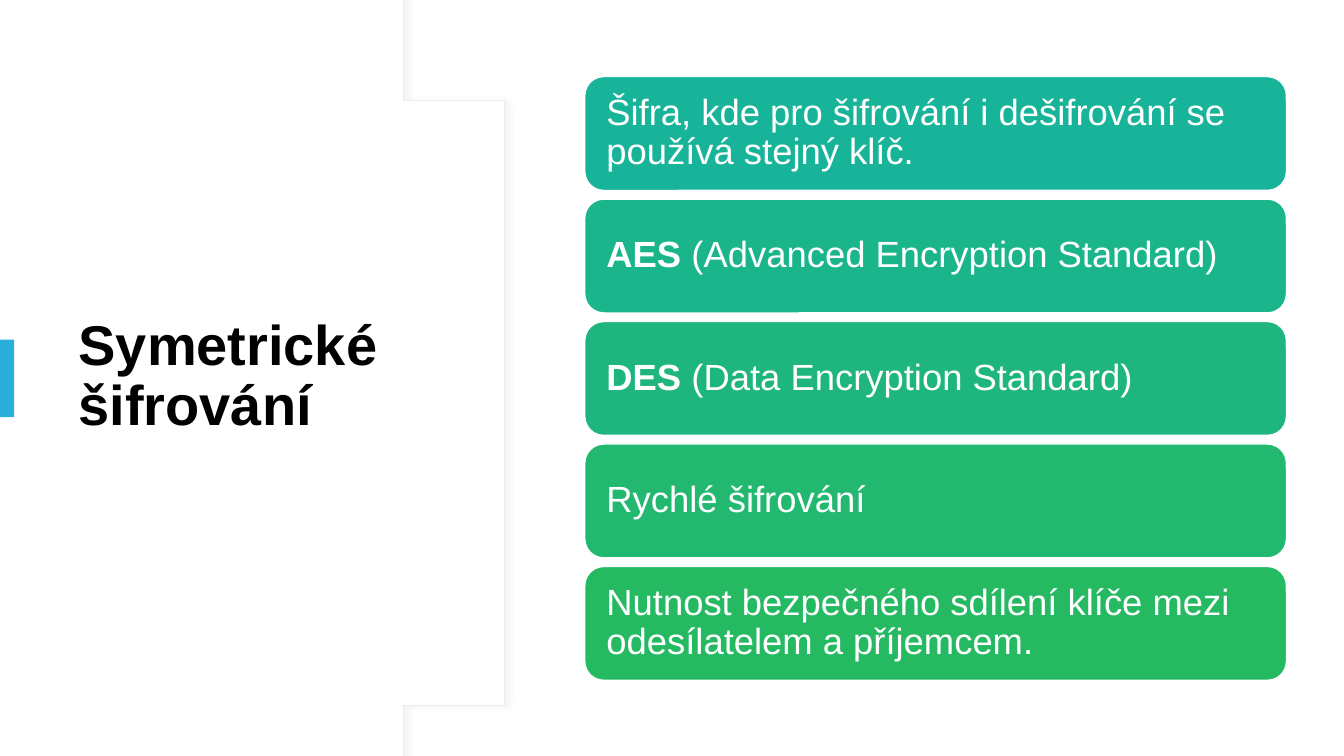
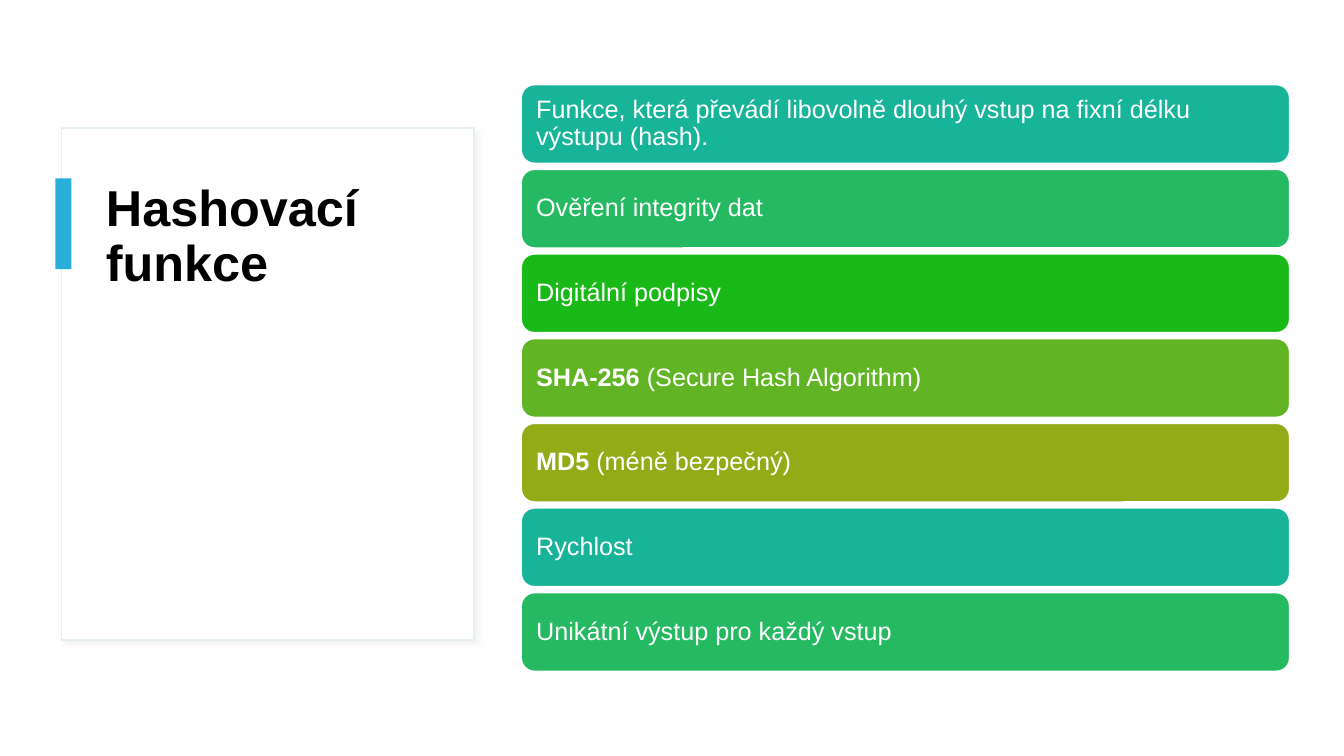
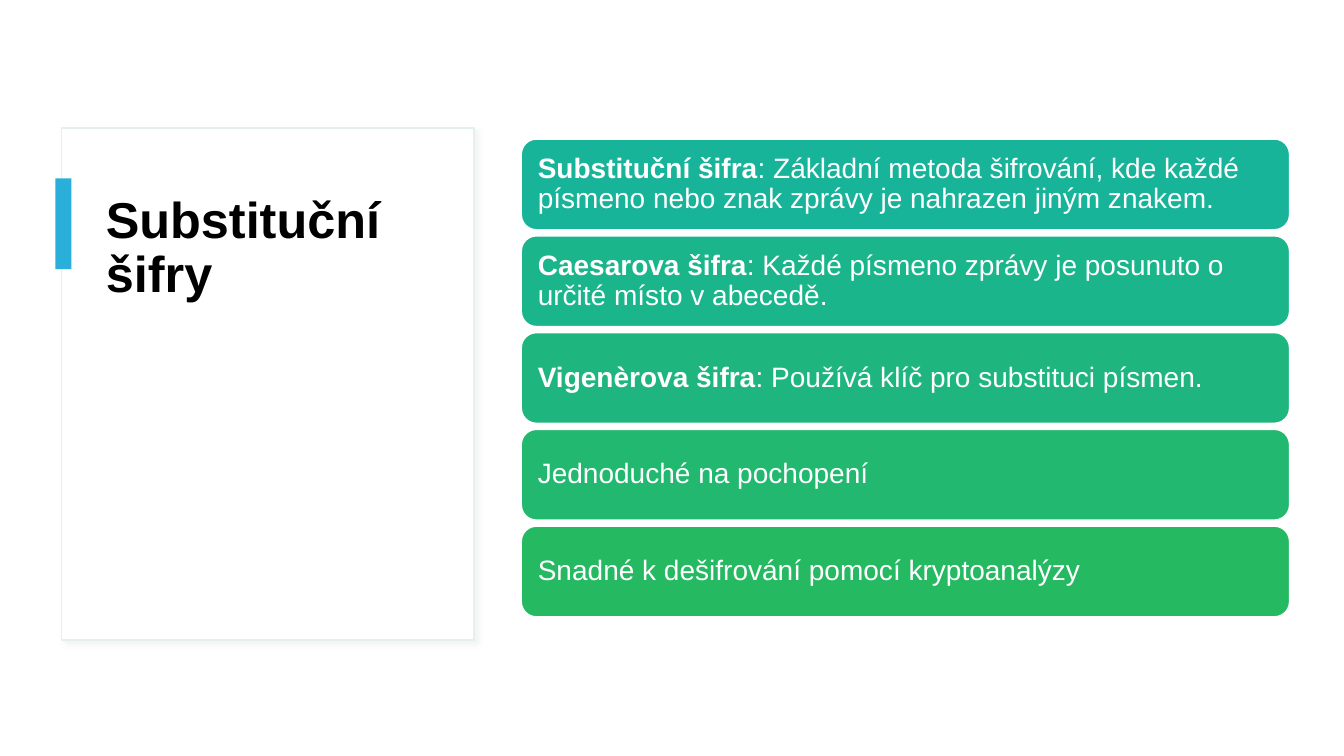
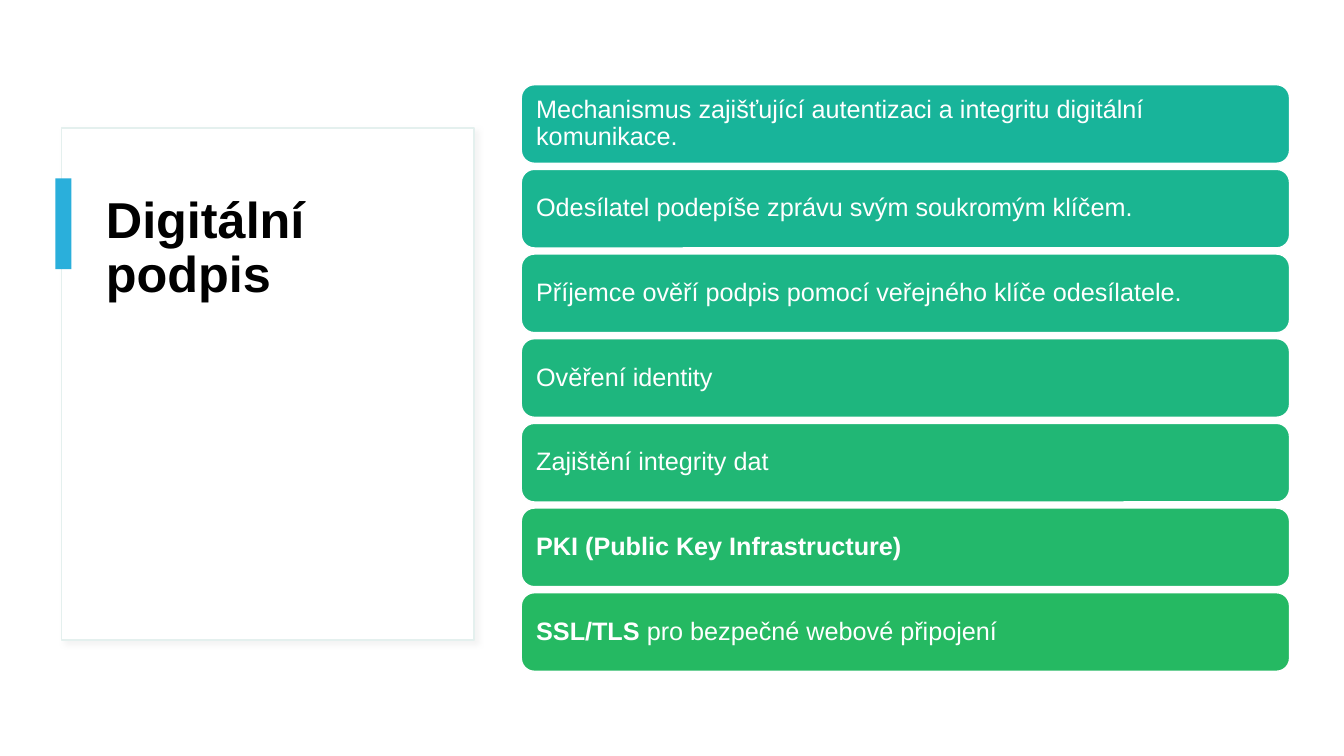
import pptx
import pptx.util
import pptx.dml.color
import pptx.enum.shapes
import pptx.enum.text
import pptx.oxml
import pptx.oxml.ns

Inches = pptx.util.Inches
Pt = pptx.util.Pt
RGBColor = pptx.dml.color.RGBColor
SHAPE = pptx.enum.shapes.MSO_SHAPE
ANCHOR = pptx.enum.text.MSO_ANCHOR

WHITE = RGBColor(0xFF, 0xFF, 0xFF)
BLACK = RGBColor(0x00, 0x00, 0x00)
BLUE = RGBColor(0x2A, 0xAF, 0xDB)
PALE = RGBColor(0xE4, 0xF0, 0xEE)
SHADOW = RGBColor(0xD9, 0xD9, 0xD9)
TEAL = RGBColor(0x18, 0xB4, 0x9A)
GREEN = RGBColor(0x25, 0xB9, 0x62)
ACCENTS = [TEAL, GREEN, RGBColor(0x19, 0xBA, 0x18),
           RGBColor(0x61, 0xB5, 0x24), RGBColor(0x93, 0xAB, 0x16)]
FONT = "Arial"

# Content: each card is (bold text, regular text)
SLIDES = [
    {"title": "Symetrické šifrování", "panel": "curve", "stack": "large", "colours": "blend",
     "cards": [
         ("", "Šifra, kde pro šifrování i dešifrování se používá stejný klíč."),
         ("AES", " (Advanced Encryption Standard)"),
         ("DES", " (Data Encryption Standard)"),
         ("", "Rychlé šifrování"),
         ("", "Nutnost bezpečného sdílení klíče mezi odesílatelem a příjemcem."),
     ]},
    {"title": "Hashovací funkce", "panel": "frame", "stack": "small", "colours": "accents",
     "title_top": 1.77,
     "cards": [
         ("", "Funkce, která převádí libovolně dlouhý vstup na fixní délku výstupu (hash)."),
         ("", "Ověření integrity dat"),
         ("", "Digitální podpisy"),
         ("SHA-256", " (Secure Hash Algorithm)"),
         ("MD5", " (méně bezpečný)"),
         ("", "Rychlost"),
         ("", "Unikátní výstup pro každý vstup"),
     ]},
    {"title": "Substituční šifry", "panel": "frame", "stack": "medium", "colours": "blend",
     "cards": [
         ("Substituční šifra", ": Základní metoda šifrování, kde každé písmeno nebo znak "
                               "zprávy je nahrazen jiným znakem."),
         ("Caesarova šifra", ": Každé písmeno zprávy je posunuto o určité místo v abecedě."),
         ("Vigenèrova šifra", ": Používá klíč pro substituci písmen."),
         ("", "Jednoduché na pochopení"),
         ("", "Snadné k dešifrování pomocí kryptoanalýzy"),
     ]},
    {"title": "Digitální podpis", "panel": "frame", "stack": "small", "colours": "blend",
     "cards": [
         ("", "Mechanismus zajišťující autentizaci a integritu digitální komunikace."),
         ("", "Odesílatel podepíše zprávu svým soukromým klíčem."),
         ("", "Příjemce ověří podpis pomocí veřejného klíče odesílatele."),
         ("", "Ověření identity"),
         ("", "Zajištění integrity dat"),
         ("PKI (Public Key Infrastructure)", ""),
         ("SSL/TLS", " pro bezpečné webové připojení"),
     ]},
]

# Layout in inches
STACKS = {
    "large": {"left": 5.8, "width": 6.96, "top": 0.76, "bottom": 6.75,
              "height": 1.13, "size": 26, "inset": 0.16},
    "medium": {"left": 5.17, "width": 7.62, "top": 1.38, "bottom": 6.12,
               "height": 0.9, "size": 20, "inset": 0.12},
    "small": {"left": 5.17, "width": 7.62, "top": 0.84, "bottom": 6.66,
              "height": 0.78, "size": 18, "inset": 0.11},
}
PANELS = {
    "curve": {"title": (0.68, 1.27, 3.94, 4.95), "size": 40, "anchor": ANCHOR.MIDDLE,
              "marker": (0, 3.37, 0.14, 0.77), "line": 0.75, "shadow_angle": 0},
    "frame": {"title": (0.95, 1.88, 3.39, 3.85), "size": 36, "anchor": ANCHOR.TOP,
              "marker": (0.55, 1.77, 0.16, 0.9), "line": 1, "shadow_angle": 45},
}
FRAME_BOX = (0.61, 1.27, 4.09, 5.08)
CURVE = [(4.01, 0.08), (4.79, 1.02), (5.27, 2.32), (5.27, 3.75)]
CURVE_STEPS = 30
SLIDE_WIDTH, SLIDE_HEIGHT = 13.33, 7.5


def set_all(target, values):
    for name, value in values.items():
        setattr(target, name, value)


def add_box(slide, kind, box, fill):
    shape = slide.shapes.add_shape(kind, *map(Inches, box))
    shape.shadow.inherit = False
    shape.fill.solid()
    shape.fill.fore_color.rgb = fill
    shape.line.fill.background()
    return shape


def set_line(shape, colour, width):
    shape.line.color.rgb = colour
    shape.line.width = Pt(width)


def add_soft_shadow(shape, angle):
    effects = shape._element.spPr.find(pptx.oxml.ns.qn("a:effectLst"))
    effects.append(pptx.oxml.parse_xml(
        f'<a:outerShdw {pptx.oxml.ns.nsdecls("a")} blurRad="{Pt(4)}" dist="{Pt(3)}" '
        f'dir="{angle * 60000}" algn="tl" rotWithShape="0"><a:srgbClr val="{SHADOW}">'
        '<a:alpha val="30000"/></a:srgbClr></a:outerShdw>'))


def curve_points():
    """Upper half of the arc from its control points, then its mirror."""
    upper = []
    for step in range(CURVE_STEPS + 1):
        t = step / CURVE_STEPS
        weights = ((1 - t) ** 3, 3 * t * (1 - t) ** 2, 3 * t ** 2 * (1 - t), t ** 3)
        upper.append(tuple(sum(weight * point[axis] for weight, point in zip(weights, CURVE))
                           for axis in (0, 1)))
    upper.insert(0, (3.94, 0))
    return upper + [(x, SLIDE_HEIGHT - y) for x, y in reversed(upper[:-1])]


def add_panel(slide, kind):
    if kind == "frame":
        panel = add_box(slide, SHAPE.RECTANGLE, FRAME_BOX, WHITE)
    else:
        builder = slide.shapes.build_freeform(0, 0, scale=Inches(1))
        builder.add_line_segments(curve_points() + [(0, SLIDE_HEIGHT)], close=True)
        panel = builder.convert_to_shape()
        panel.shadow.inherit = False
        panel.fill.solid()
        panel.fill.fore_color.rgb = WHITE
    set_line(panel, PALE, PANELS[kind]["line"])
    add_soft_shadow(panel, PANELS[kind]["shadow_angle"])
    slide.shapes.title._element.addprevious(panel._element)


def write_text(shape, runs, size, colour, anchor, inset=None):
    frame = shape.text_frame
    set_all(frame, {"word_wrap": True, "vertical_anchor": anchor,
                    "auto_size": pptx.enum.text.MSO_AUTO_SIZE.NONE})
    if inset is not None:
        set_all(frame, dict.fromkeys(("margin_left", "margin_right"), Inches(inset)))
        set_all(frame, dict.fromkeys(("margin_top", "margin_bottom"), 0))
    paragraph = frame.paragraphs[0]
    set_all(paragraph, {"alignment": pptx.enum.text.PP_ALIGN.LEFT, "line_spacing": 0.9})
    for text, bold in runs:
        if text:
            run = paragraph.add_run()
            run.text = text
            set_all(run.font, {"name": FONT, "size": Pt(size), "bold": bold})
            run.font.color.rgb = colour


def add_title(slide, content):
    panel = PANELS[content["panel"]]
    left, top, width, height = panel["title"]
    bottom = top + height
    top = content.get("title_top", top)
    box = (left, top, width, bottom - top)
    set_all(slide.shapes.title, dict(zip(("left", "top", "width", "height"), map(Inches, box))))
    write_text(slide.shapes.title, [(content["title"], True)], panel["size"], BLACK,
               panel["anchor"])


def card_colour(scheme, index, count):
    if scheme == "accents":
        return ACCENTS[index % len(ACCENTS)]
    share = index / (count - 1)
    return RGBColor(*(round(start + (end - start) * share) for start, end in zip(TEAL, GREEN)))


def add_cards(slide, content):
    stack, cards = STACKS[content["stack"]], content["cards"]
    height = stack["height"]
    pitch = (stack["bottom"] - stack["top"] - height) / (len(cards) - 1)
    for index, (bold, regular) in enumerate(cards):
        box = (stack["left"], stack["top"] + index * pitch, stack["width"], height)
        card = add_box(slide, SHAPE.ROUNDED_RECTANGLE, box,
                       card_colour(content["colours"], index, len(cards)))
        set_line(card, WHITE, 1)
        write_text(card, [(bold, True), (regular, False)], stack["size"], WHITE,
                   ANCHOR.MIDDLE, stack["inset"])


def main():
    presentation = pptx.Presentation()
    set_all(presentation, {"slide_width": Inches(SLIDE_WIDTH),
                           "slide_height": Inches(SLIDE_HEIGHT)})
    title_only = presentation.slide_layouts[5]
    for content in SLIDES:
        slide = presentation.slides.add_slide(title_only)
        add_panel(slide, content["panel"])
        add_title(slide, content)
        add_box(slide, SHAPE.RECTANGLE, PANELS[content["panel"]]["marker"], BLUE)
        add_cards(slide, content)
    presentation.save("out.pptx")


if __name__ == "__main__":
    main()
